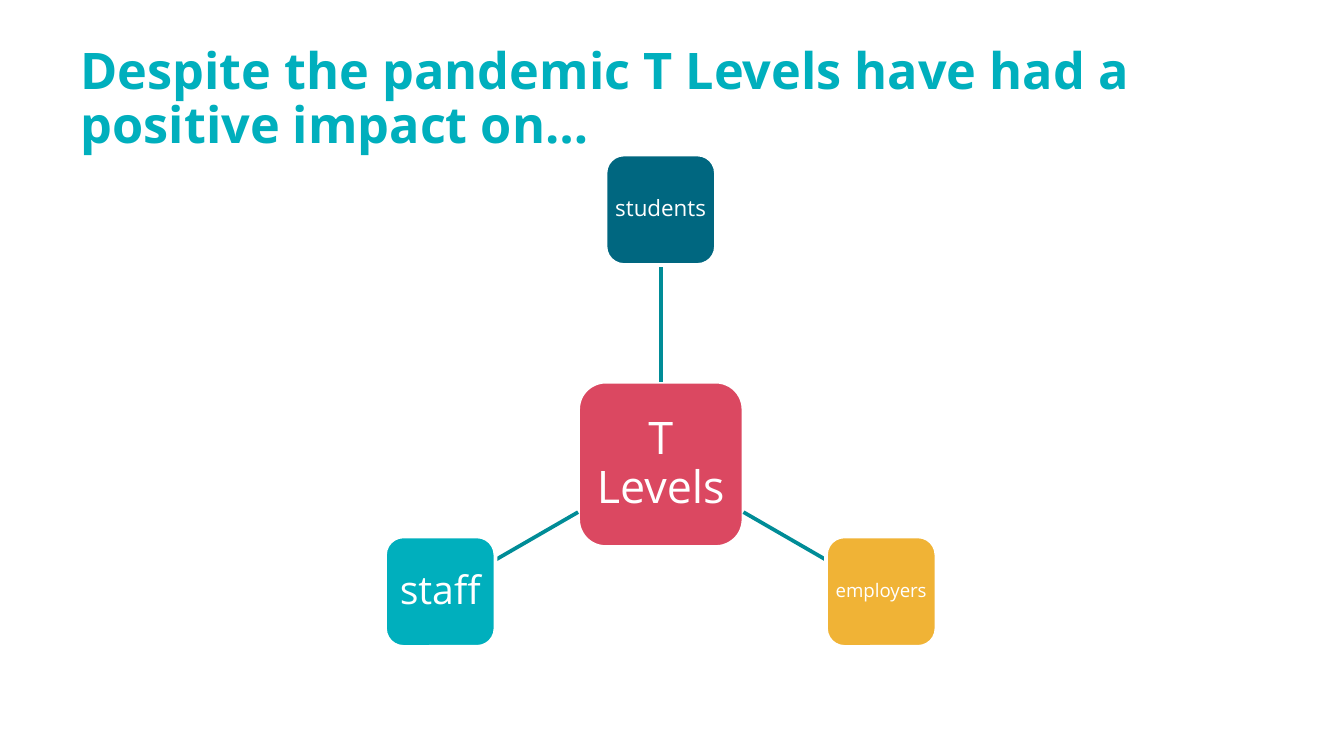
from math import cos, radians, sin

from lxml.etree import SubElement
from pptx import Presentation
from pptx.dml.color import RGBColor
from pptx.enum.shapes import MSO_CONNECTOR, MSO_SHAPE
from pptx.enum.text import MSO_ANCHOR, MSO_AUTO_SIZE, PP_ALIGN
from pptx.oxml.ns import qn
from pptx.util import Pt

TITLE = "Despite the pandemic T Levels have had a positive impact on…"
HUB = {"text": "T Levels", "color": "DB4861", "font_size": 24}
GROUPS = [
    {"text": "students", "color": "006780", "font_size": 12, "angle": -90},
    {"text": "employers", "color": "F0B336", "font_size": 10, "angle": 30},
    {"text": "staff", "color": "00AFBD", "font_size": 21, "angle": 150},
]
FONT = "Open Sans"
WHITE, TEAL, LINE_COLOR = "FFFFFF", "00AFBD", "008C97"
CENTER_X, CENTER_Y = 354, 248.8
RADIUS = 136.4
HUB_SIZE, GROUP_SIZE = 88.6, 59.2
TOP, BOTTOM = 0, 2


def rgb(color):
    return RGBColor.from_string(color)


def write(shape, text, size, color, bold=False, align=PP_ALIGN.CENTER, inset=None):
    frame = shape.text_frame
    frame.word_wrap = True
    frame.auto_size = MSO_AUTO_SIZE.NONE
    frame.vertical_anchor = MSO_ANCHOR.MIDDLE
    if inset is not None:
        frame.margin_left = frame.margin_right = Pt(inset)
        frame.margin_top = frame.margin_bottom = Pt(inset)
    paragraph = frame.paragraphs[0]
    paragraph.alignment = align
    paragraph.line_spacing = 0.9
    run = paragraph.add_run()
    run.text = text
    run.font.name = FONT
    run.font.size = Pt(size)
    run.font.bold = bold
    run.font.color.rgb = rgb(color)


def add_node(slide, node, x, y, size, inset):
    """Add a rounded square centred on x, y."""
    shape = slide.shapes.add_shape(
        MSO_SHAPE.ROUNDED_RECTANGLE,
        Pt(x - size / 2), Pt(y - size / 2), Pt(size), Pt(size))
    shape.shadow.inherit = False
    shape.fill.solid()
    shape.fill.fore_color.rgb = rgb(node["color"])
    shape.line.color.rgb = rgb(WHITE)
    shape.line.width = Pt(2)
    write(shape, node["text"], node["font_size"], WHITE, inset=inset)
    return shape


def add_spoke(slide, angle):
    """Add a line from the hub's edge to the edge of the node at this angle."""
    across, down = cos(radians(angle)), sin(radians(angle))
    longest = max(abs(across), abs(down))
    start = HUB_SIZE / 2 / longest
    end = RADIUS - GROUP_SIZE / 2 / longest
    spoke = slide.shapes.add_connector(
        MSO_CONNECTOR.STRAIGHT,
        Pt(CENTER_X + start * across), Pt(CENTER_Y + start * down),
        Pt(CENTER_X + end * across), Pt(CENTER_Y + end * down))
    spoke.line.color.rgb = rgb(LINE_COLOR)
    spoke.line.width = Pt(2)
    SubElement(spoke.element.spPr, qn("a:effectLst"))
    return spoke


def main():
    presentation = Presentation()
    presentation.slide_width, presentation.slide_height = Pt(720), Pt(405)
    slide = presentation.slides.add_slide(presentation.slide_layouts[5])

    title = slide.shapes.title
    title.left, title.top, title.width, title.height = Pt(36), Pt(32.4), Pt(648), Pt(42.5)
    write(title, TITLE, 27, TEAL, bold=True, align=PP_ALIGN.LEFT)

    hub = add_node(slide, HUB, CENTER_X, CENTER_Y, HUB_SIZE, inset=5)
    for group in GROUPS:
        angle = group["angle"]
        spoke = add_spoke(slide, angle)
        x = CENTER_X + RADIUS * cos(radians(angle))
        y = CENTER_Y + RADIUS * sin(radians(angle))
        node = add_node(slide, group, x, y, GROUP_SIZE, inset=1.5)
        if angle == -90:
            spoke.begin_connect(hub, TOP)
            spoke.end_connect(node, BOTTOM)

    presentation.save("out.pptx")


if __name__ == "__main__":
    main()
